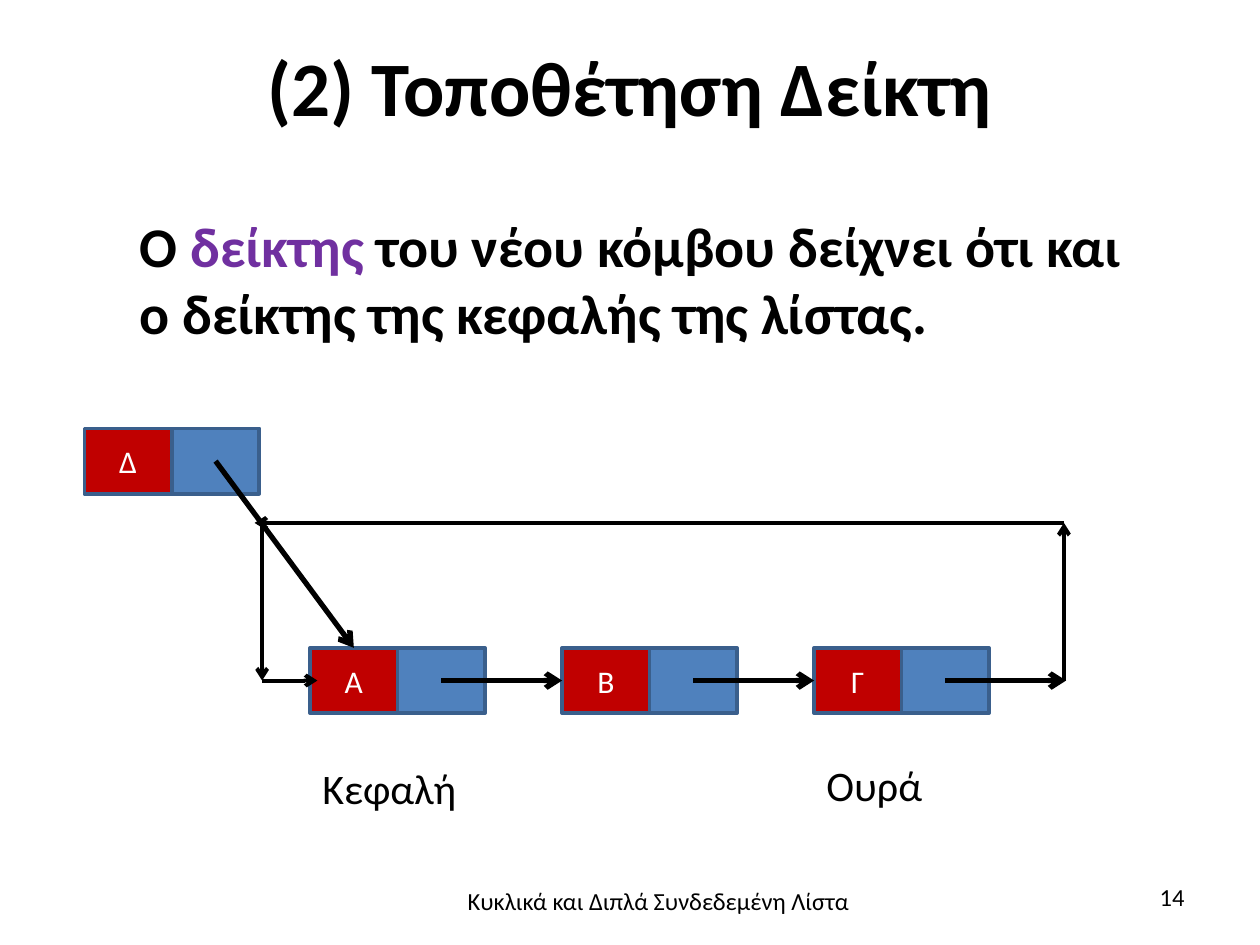
from lxml.etree import SubElement
from pptx import Presentation
from pptx.dml.color import RGBColor
from pptx.enum.shapes import MSO_CONNECTOR, MSO_SHAPE
from pptx.enum.text import MSO_ANCHOR, PP_ALIGN
from pptx.oxml.ns import qn
from pptx.util import Pt

FONT = "Calibri"
BLACK, WHITE, PURPLE = "000000", "FFFFFF", "7030A0"
RED, BLUE, EDGE = "C00000", "4F81BD", "3A5F8C"
CELL_WIDTH, CELL_HEIGHT = 50, 37.4
LIST_LEFT, LIST_TOP, LIST_STEP = 177.2, 370.2, 144
TOP, LEFT = 0, 1


def color(code):
    """Return the colour for a hex string."""
    return RGBColor.from_string(code)


def set_font(font, size, code, bold=False):
    """Set face, size, colour and weight of a font."""
    font.name, font.size, font.bold = FONT, Pt(size), bold
    font.color.rgb = color(code)


def add_text(page, place, spans, size, bold=False, align=PP_ALIGN.LEFT,
             anchor=MSO_ANCHOR.TOP, insets=(7.2, 3.6, 7.2, 3.6), spacing=None):
    """Add a text box from (text, colour) spans in one paragraph."""
    box = page.shapes.add_textbox(*map(Pt, place))
    frame = box.text_frame
    frame.word_wrap, frame.vertical_anchor = True, anchor
    (frame.margin_left, frame.margin_top,
     frame.margin_right, frame.margin_bottom) = map(Pt, insets)
    para = frame.paragraphs[0]
    para.alignment, para.line_spacing = align, spacing
    set_font(para.font, size, spans[0][1], bold)
    for text, code in spans:
        span = para.add_run()
        span.text = text
        set_font(span.font, size, code, bold)


def add_cell(page, left, top, fill, label=""):
    """Add one cell of a list node."""
    cell = page.shapes.add_shape(MSO_SHAPE.RECTANGLE, Pt(left), Pt(top),
                                 Pt(CELL_WIDTH), Pt(CELL_HEIGHT))
    cell.shadow.inherit = False
    cell.fill.solid()
    cell.fill.fore_color.rgb = color(fill)
    cell.line.color.rgb, cell.line.width = color(EDGE), Pt(2)
    if label:
        cell.text_frame.vertical_anchor = MSO_ANCHOR.MIDDLE
        para = cell.text_frame.paragraphs[0]
        para.text, para.alignment = label, PP_ALIGN.CENTER
        set_font(para.font, 18, WHITE)
    return cell


def add_node(page, left, top, label):
    """Add a node with a data cell and a pointer cell; return the data cell."""
    data = add_cell(page, left, top, RED, label)
    add_cell(page, left + CELL_WIDTH, top, BLUE)
    return data


def add_arrow(page, start, end, width, target=None, side=LEFT):
    """Add a straight arrow, joined to a side of the target if there is one."""
    arrow = page.shapes.add_connector(MSO_CONNECTOR.STRAIGHT,
                                      *map(Pt, (*start, *end)))
    arrow.line.color.rgb, arrow.line.width = color(BLACK), Pt(width)
    SubElement(arrow.line._get_or_add_ln(), qn("a:tailEnd"), type="arrow")
    SubElement(arrow._element.spPr, qn("a:effectLst"))
    if target is not None:
        arrow.end_connect(target, side)


def add_list(page):
    """Add the three linked nodes, the new node and all pointers."""
    lefts = [LIST_LEFT + LIST_STEP * index for index in range(3)]
    nodes = [add_node(page, left, LIST_TOP, label)
             for left, label in zip(lefts, "ΑΒΓ")]
    new_left, new_top = 48.2, 244.8
    add_node(page, new_left, new_top, "Δ")

    middle = LIST_TOP + CELL_HEIGHT / 2
    pointer = CELL_WIDTH * 1.5
    for left, target in zip(lefts, nodes[1:] + [None]):
        add_arrow(page, (left + pointer, middle), (left + LIST_STEP, middle),
                  3, target)

    right, loop_left, loop_top = 608, 149.8, 298.8
    add_arrow(page, (right, middle), (right, loop_top), 2.25)
    add_arrow(page, (right, loop_top), (145.5, loop_top), 2.25)
    add_arrow(page, (loop_left, loop_top), (loop_left, middle), 2.25)
    add_arrow(page, (loop_left, middle), (181.4, middle), 2.25)
    add_arrow(page, (new_left + pointer, new_top + CELL_HEIGHT / 2),
              (LIST_LEFT + CELL_WIDTH / 2, LIST_TOP), 3, nodes[0], TOP)


def main():
    """Build the slide and save it."""
    deck = Presentation()
    deck.slide_width, deck.slide_height = Pt(720), Pt(540)
    page = deck.slides.add_slide(deck.slide_layouts[6])
    add_text(page, (2.9, 0.7, 714.2, 99.4), [("(2) Τοποθέτηση Δείκτη", BLACK)],
             44, True, PP_ALIGN.CENTER, MSO_ANCHOR.MIDDLE, (0, 1.4, 0, 0), 0.98)
    add_text(page, (72, 116.6, 594, 85.7),
             [("Ο ", BLACK), ("δείκτης", PURPLE),
              (" του νέου κόμβου δείχνει ότι και ο δείκτης της κεφαλής "
               "της λίστας.", BLACK)],
             32, True, insets=(7.9, 4.3, 7.9, 4.3))
    add_list(page)
    add_text(page, (177.2, 432, 116, 34.6), [("Κεφαλή", BLACK)], 24)
    add_text(page, (465.2, 430.6, 100, 34.6), [("Ουρά", BLACK)], 24)
    add_text(page, (250.6, 502.6, 251.3, 37.4),
             [("Κυκλικά και Διπλά Συνδεδεμένη Λίστα", BLACK)], 14,
             align=PP_ALIGN.CENTER)
    add_text(page, (516.2, 500.4, 167.8, 28.8), [("14", BLACK)], 14,
             align=PP_ALIGN.RIGHT)
    deck.save("out.pptx")


if __name__ == "__main__":
    main()
